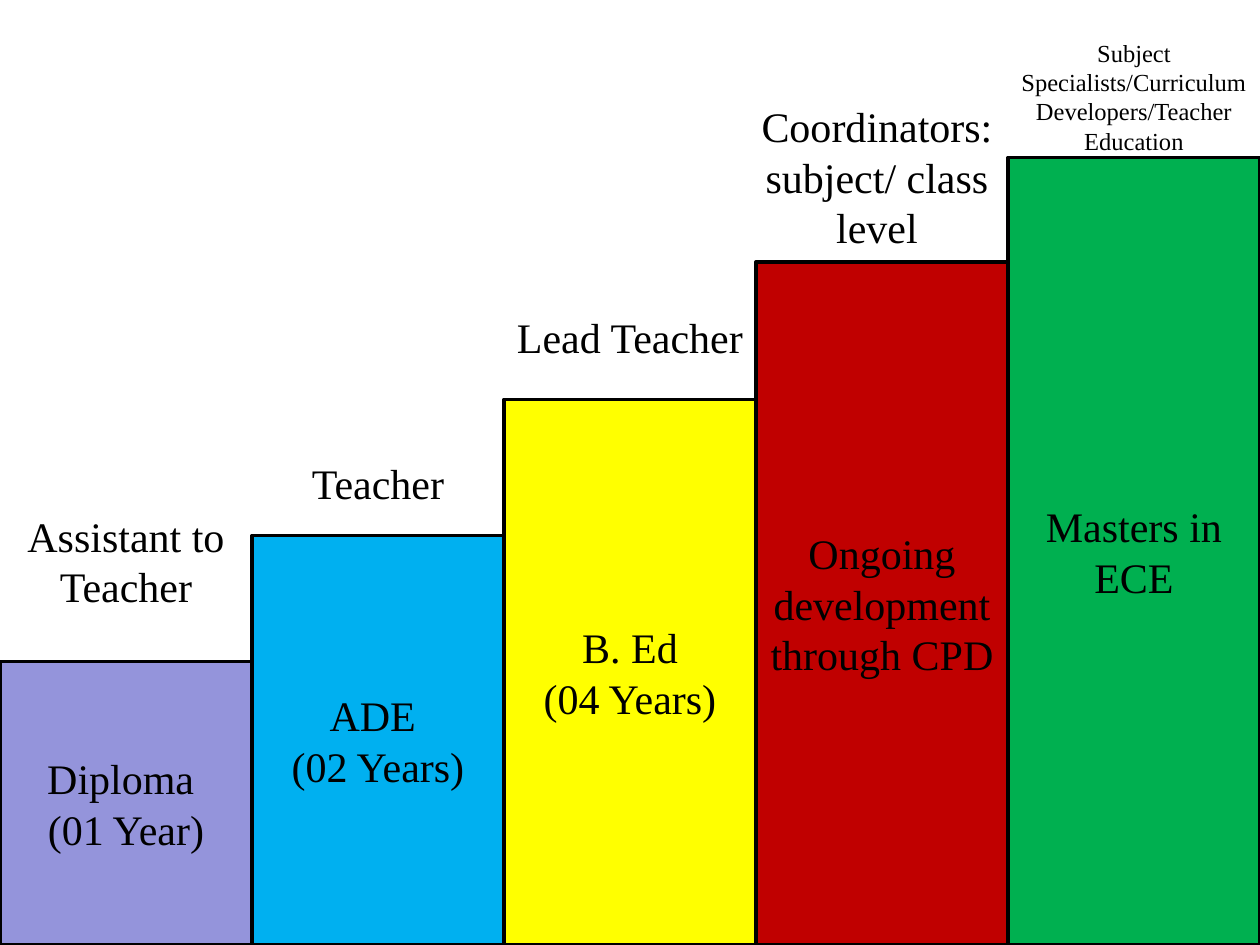
"""Build a staircase of teaching qualifications and the roles they lead to."""
from pptx import Presentation
from pptx.dml.color import RGBColor
from pptx.enum.shapes import MSO_SHAPE
from pptx.enum.text import MSO_ANCHOR, MSO_AUTO_SIZE, PP_ALIGN
from pptx.util import Inches, Pt

WIDTH, HEIGHT, STEP = 10, 7.5, 2

STEPS = [
    ("Diploma \n(01 Year)", "9494DB", 5.25),
    ("ADE \n(02 Years)", "00B0F0", 4.25),
    ("B. Ed\n(04 Years)", "FFFF00", 3.17),
    ("Ongoing development through CPD", "C00000", 2.08),
    ("Masters in ECE", "00B050", 1.25),
]

ROLES = [
    ("Assistant to Teacher", 0, 4, 2, 1.25, 24),
    ("Teacher", 2, 3.58, 2, 0.5, 24),
    ("Lead Teacher", 4, 2.42, 2, 0.5, 24),
    ("Coordinators:subject/ class level", 5.92, 0.75, 2.08, 1.31, 24),
    ("Subject Specialists/Curriculum Developers/Teacher Education",
     8, 0.25, 2, 1.04, 14),
]


def rgb(value):
    return RGBColor.from_string(value)


class Deck:
    """Hold the style and the current slide."""

    font = "Times New Roman"
    ink = "000000"

    def __init__(self, slide):
        self.slide = slide

    def set_text(self, sp, text, size, anchor):
        tf = sp.text_frame
        tf.word_wrap = True
        tf.vertical_anchor = anchor
        tf.text = text
        for p in tf.paragraphs:
            p.alignment = PP_ALIGN.CENTER
            for r in p.runs:
                r.font.name = self.font
                r.font.size = Pt(size)
                r.font.color.rgb = rgb(self.ink)

    def bar(self, text, color, x, y, w, h):
        sp = self.slide.shapes.add_shape(
            MSO_SHAPE.RECTANGLE, Inches(x), Inches(y), Inches(w), Inches(h))
        sp.shadow.inherit = False
        sp.fill.solid()
        sp.fill.fore_color.rgb = rgb(color)
        sp.line.color.rgb = rgb(self.ink)
        sp.line.width = Pt(2)
        self.set_text(sp, text, 24, MSO_ANCHOR.MIDDLE)

    def label(self, text, x, y, w, h, size):
        sp = self.slide.shapes.add_textbox(
            Inches(x), Inches(y), Inches(w), Inches(h))
        self.set_text(sp, text, size, MSO_ANCHOR.TOP)
        sp.text_frame.auto_size = MSO_AUTO_SIZE.SHAPE_TO_FIT_TEXT


def main():
    prs = Presentation()
    prs.slide_width, prs.slide_height = Inches(WIDTH), Inches(HEIGHT)
    deck = Deck(prs.slides.add_slide(prs.slide_layouts[6]))
    for i, (text, color, top) in enumerate(STEPS):
        deck.bar(text, color, i * STEP, top, STEP, HEIGHT - top)
    for role in ROLES:
        deck.label(*role)
    prs.save("out.pptx")


if __name__ == "__main__":
    main()
